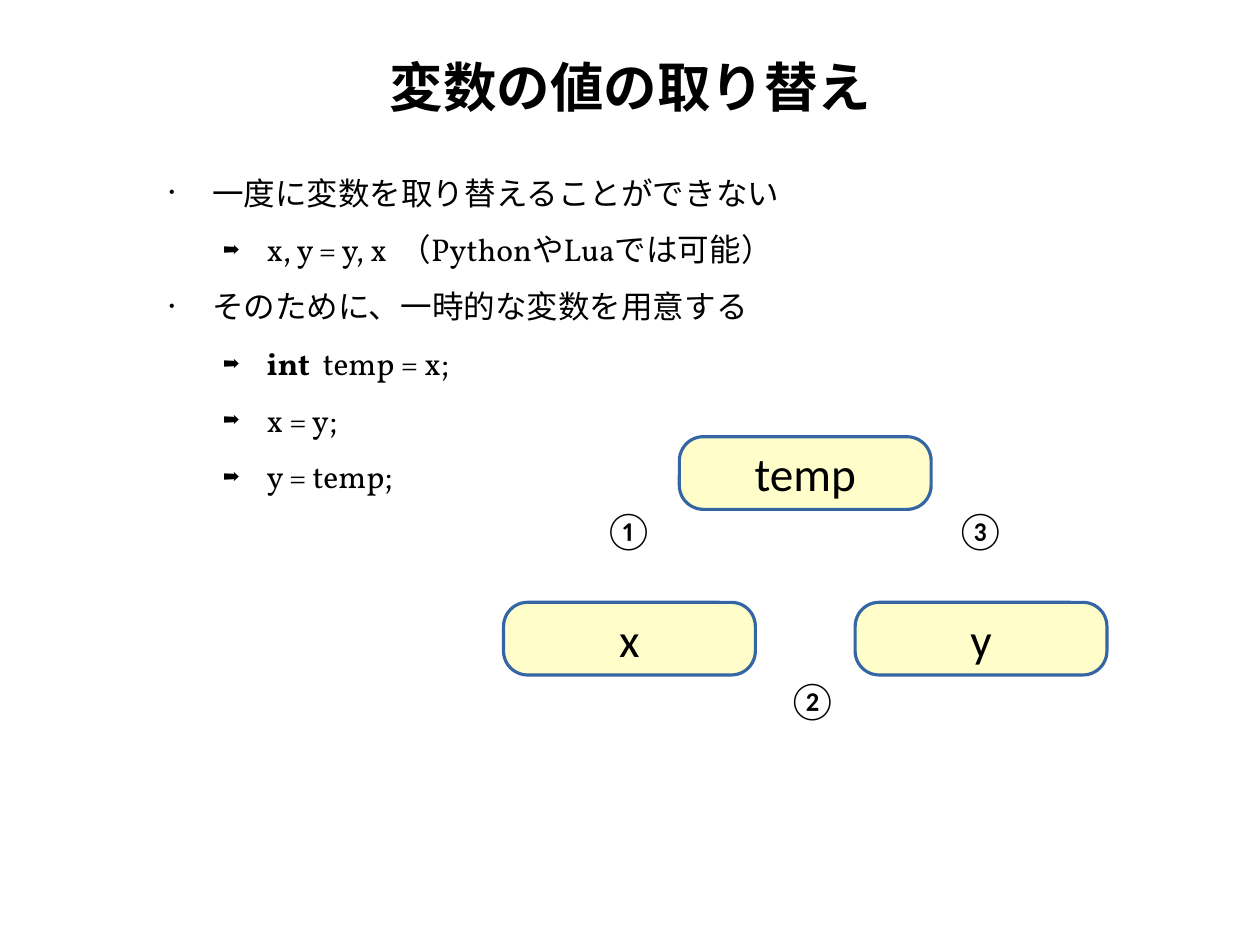
import dataclasses

import pptx
import pptx.dml.color
import pptx.enum.shapes
import pptx.enum.text
import pptx.oxml
import pptx.oxml.ns
import pptx.util

PX = 9144  # 100 px to the inch
ALIGN = pptx.enum.text.PP_ALIGN
MIDDLE = pptx.enum.text.MSO_ANCHOR.MIDDLE


@dataclasses.dataclass(frozen=True)
class Theme:
    ink: str = "000000"
    variable_fill: str = "FFFDC9"
    variable_line: str = "3465A4"
    text_face: str = "Vollkorn"
    japanese_face: str = "Noto Sans CJK JP"
    diagram_face: str = "Calibri"
    title_size: int = 34
    list_size: int = 20
    list_pitch: int = 24
    list_gap: int = 12
    variable_size: int = 30
    step_size: int = 24
    outline: int = 2


THEME = Theme()

# Each item: level, then runs of (text, bold)
ITEMS = [
    (0, [("一度に変数を取り替えることができない", False)]),
    (1, [("x, y = y, x  （PythonやLuaでは可能）", False)]),
    (0, [("そのために、一時的な変数を用意する", False)]),
    (1, [("int", True), ("  temp = x;", False)]),
    (1, [("x = y;", False)]),
    (1, [("y = temp;", False)]),
]
# Level: bullet, left margin in px
BULLETS = [("•", 74), ("➡", 122)]
HANGING = 38


def px(*lengths):
    return [pptx.util.Emu(length * PX) for length in lengths]


def rgb(value):
    return pptx.dml.color.RGBColor.from_string(value)


def place(shape, box):
    shape.left, shape.top, shape.width, shape.height = px(*box)


def set_frame(frame, inset, anchor, wrap=True):
    frame.margin_left = frame.margin_right = px(inset)[0]
    frame.margin_top = frame.margin_bottom = px(inset)[0]
    frame.vertical_anchor = anchor
    frame.word_wrap = wrap
    frame.auto_size = pptx.enum.text.MSO_AUTO_SIZE.NONE


def style_run(run, size, latin, east_asian, bold=False):
    run.font.size = pptx.util.Pt(size)
    run.font.name = latin
    run.font.bold = bold
    run.font.color.rgb = rgb(THEME.ink)
    face = pptx.oxml.parse_xml(
        f'<a:ea {pptx.oxml.ns.nsdecls("a")} typeface="{east_asian}"/>')
    run.font._element.find(pptx.oxml.ns.qn("a:latin")).addnext(face)


def set_centred(frame, text, size, face, bold=False):
    frame.text = text
    paragraph = frame.paragraphs[0]
    paragraph.alignment = ALIGN.CENTER
    style_run(paragraph.runs[0], size, face, face, bold)


def add_bullet(paragraph, level):
    mark, margin = BULLETS[level]
    properties = paragraph._p.get_or_add_pPr()
    left, indent = px(margin, -HANGING)
    properties.set("marL", str(left))
    properties.set("indent", str(indent))
    for tag, value in (("buSzPct", "50000"), ("buChar", mark)):
        element = pptx.oxml.parse_xml(
            f'<a:{tag} {pptx.oxml.ns.nsdecls("a")}/>')
        element.set("char" if tag == "buChar" else "val", value)
        properties.append(element)


def fill_title(title, box, text):
    place(title, box)
    set_frame(title.text_frame, 0, MIDDLE)
    set_centred(title.text_frame, text, THEME.title_size, THEME.text_face, bold=True)


def fill_list(body, box, items):
    place(body, box)
    frame = body.text_frame
    set_frame(frame, 4, pptx.enum.text.MSO_ANCHOR.TOP)
    for index, (level, pieces) in enumerate(items):
        paragraph = frame.add_paragraph() if index else frame.paragraphs[0]
        add_bullet(paragraph, level)
        paragraph.level = level
        paragraph.alignment = ALIGN.JUSTIFY
        paragraph.line_spacing = pptx.util.Pt(THEME.list_pitch)
        paragraph.space_before = pptx.util.Pt(THEME.list_gap if index else 0)
        for text, bold in pieces:
            run = paragraph.add_run()
            run.text = text
            style_run(run, THEME.list_size, THEME.text_face, THEME.japanese_face, bold)


def add_variable(slide, box, name):
    variable = slide.shapes.add_shape(
        pptx.enum.shapes.MSO_SHAPE.ROUNDED_RECTANGLE, *px(*box))
    variable.adjustments[0] = 0.33
    variable.shadow.inherit = False
    variable.fill.solid()
    variable.fill.fore_color.rgb = rgb(THEME.variable_fill)
    variable.line.color.rgb = rgb(THEME.variable_line)
    variable.line.width = pptx.util.Pt(THEME.outline)
    set_frame(variable.text_frame, 0, MIDDLE)
    set_centred(variable.text_frame, name, THEME.variable_size, THEME.diagram_face)


def add_step(slide, box, number):
    step = slide.shapes.add_textbox(*px(*box))
    set_frame(step.text_frame, 4, MIDDLE, wrap=False)
    set_centred(step.text_frame, number, THEME.step_size, THEME.diagram_face)


def draw_swap(slide, box):
    """Place temp above x and y, with the numbered steps between them."""
    left, top, width, height = box
    variable_width, variable_height = 222, 64
    span = width - variable_width
    lower = height - variable_height
    for name, x, y in (("temp", span // 2, 0), ("x", 0, lower), ("y", span, lower)):
        add_variable(slide, (left + x, top + y, variable_width, variable_height), name)
    for number, x, y in (("①", 89, 58), ("②", 251, 208), ("③", 89 + span, 58)):
        add_step(slide, (left + x, top + y, 43, 47), number)


def main():
    presentation = pptx.Presentation()
    presentation.slide_width, presentation.slide_height = px(1111, 833)
    slide = presentation.slides.add_slide(presentation.slide_layouts[1])
    fill_title(slide.shapes.title, (109, 22, 894, 107), "変数の値の取り替え")
    fill_list(slide.placeholders[1], (109, 149, 894, 576), ITEMS)
    draw_swap(slide, (444, 385, 532, 210))
    presentation.save("out.pptx")


if __name__ == "__main__":
    main()
